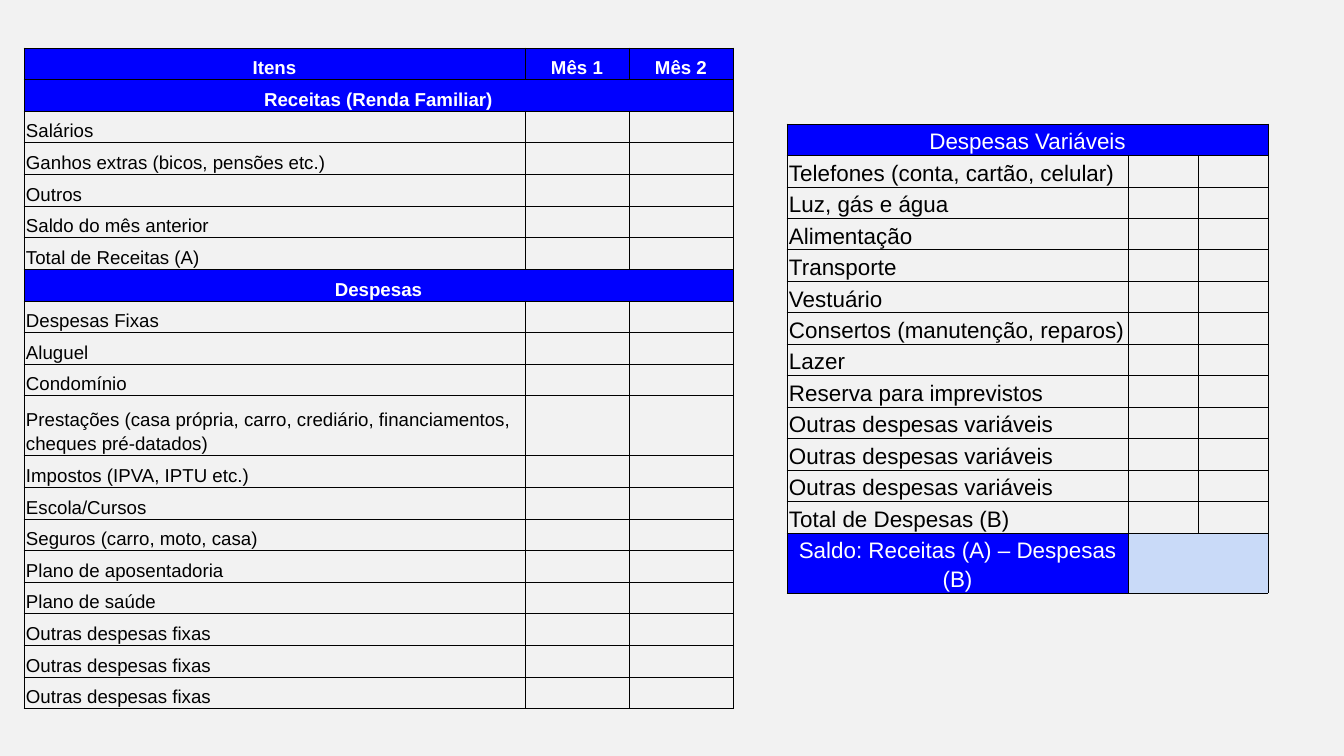
from lxml.etree import SubElement
from pptx import Presentation
from pptx.dml.color import RGBColor
from pptx.enum.text import MSO_ANCHOR, PP_ALIGN
from pptx.oxml.ns import qn
from pptx.util import Pt

PX = 914400 / 67.2
BLUE, PALE_BLUE, WHITE, BLACK, GREY = "0000FF", "C9DAF8", "FFFFFF", "000000", "F2F2F2"
TALL_ROW = 60
MARGINS = {"margin_left": 2, "margin_right": 2, "margin_top": 1, "margin_bottom": 1}

# A row is its text cells; the missing ones stay empty.
# headings: row -> cells painted blue; merges: row -> first and last merged column.
TABLES = [
    {
        "left": 24, "top": 48, "height": 661, "columns": [501, 104, 104],
        "size": 20, "bold_headings": True, "tall": 11,
        "headings": {0: 3, 1: 3, 7: 3}, "merges": {1: (0, 2), 7: (0, 2)}, "pale": [],
        "rows": [
            ["Itens", "Mês 1", "Mês 2"],
            ["Receitas (Renda Familiar)"],
            ["Salários"],
            ["Ganhos extras (bicos, pensões etc.)"],
            ["Outros"],
            ["Saldo do mês anterior"],
            ["Total de Receitas (A)"],
            ["Despesas"],
            ["Despesas Fixas"],
            ["Aluguel"],
            ["Condomínio"],
            ["Prestações (casa própria, carro, crediário, financiamentos, cheques pré-datados)"],
            ["Impostos (IPVA, IPTU etc.)"],
            ["Escola/Cursos"],
            ["Seguros (carro, moto, casa)"],
            ["Plano de aposentadoria"],
            ["Plano de saúde"],
            *[["Outras despesas fixas"]] * 3,
        ],
    },
    {
        "left": 787, "top": 124, "height": 469, "columns": [341, 70, 70],
        "size": 24, "bold_headings": False, "tall": 13,
        "headings": {0: 3, 13: 1}, "merges": {0: (0, 2), 13: (1, 2)}, "pale": [13],
        "rows": [
            ["Despesas Variáveis"],
            ["Telefones (conta, cartão, celular)"],
            ["Luz, gás e água"],
            ["Alimentação"],
            ["Transporte"],
            ["Vestuário"],
            ["Consertos (manutenção, reparos)"],
            ["Lazer"],
            ["Reserva para imprevistos"],
            *[["Outras despesas variáveis"]] * 3,
            ["Total de Despesas (B)"],
            ["Saldo: Receitas (A) – Despesas (B)"],
        ],
    },
]


def px(length):
    return round(length * PX)


def color(value):
    return RGBColor.from_string(value)


def paint(fill, value):
    fill.solid()
    fill.fore_color.rgb = color(value)


def add_borders(cell):
    properties = cell._tc.get_or_add_tcPr()
    for side in ("a:lnL", "a:lnR", "a:lnT", "a:lnB"):
        line = SubElement(properties, qn(side), w=str(Pt(1)))
        SubElement(SubElement(line, qn("a:solidFill")), qn("a:srgbClr"), val=BLACK)


def write(cell, text, heading, data):
    para = cell.text_frame.paragraphs[0]
    para.line_spacing = 1.15
    para.alignment = PP_ALIGN.CENTER if heading else PP_ALIGN.LEFT
    span = para.add_run()
    span.text = text
    formats = {"name": "Arial", "size": Pt(data["size"]),
               "bold": heading and data["bold_headings"]}
    for name, value in formats.items():
        setattr(span.font, name, value)
    span.font.color.rgb = color(WHITE if heading else BLACK)


def add_budget_table(page, data):
    rows, columns = data["rows"], data["columns"]
    frame = page.shapes.add_table(
        len(rows), len(columns),
        *map(px, (data["left"], data["top"], sum(columns), data["height"])))
    table = frame.table
    table.first_row = table.horz_banding = False
    for column, width in zip(table.columns, columns):
        column.width = px(width)
    row_height = (data["height"] - TALL_ROW) / (len(rows) - 1)

    for r, texts in enumerate(rows):
        table.rows[r].height = px(TALL_ROW if r == data["tall"] else row_height)
        for c in range(len(columns)):
            cell = table.cell(r, c)
            cell.vertical_anchor = MSO_ANCHOR.BOTTOM
            for name, value in MARGINS.items():
                setattr(cell, name, px(value))
            add_borders(cell)
            heading = c < data["headings"].get(r, 0)
            if heading:
                paint(cell.fill, BLUE)
            elif r in data["pale"]:
                paint(cell.fill, PALE_BLUE)
            else:
                cell.fill.background()
            if c < len(texts):
                write(cell, texts[c], heading, data)
    for r, (first, last) in data["merges"].items():
        table.cell(r, first).merge(table.cell(r, last))


def main():
    deck = Presentation()
    deck.slide_width, deck.slide_height = px(1344), px(756)
    page = deck.slides.add_slide(deck.slide_layouts[6])
    paint(page.background.fill, GREY)
    for data in TABLES:
        add_budget_table(page, data)
    deck.save("out.pptx")


if __name__ == "__main__":
    main()
